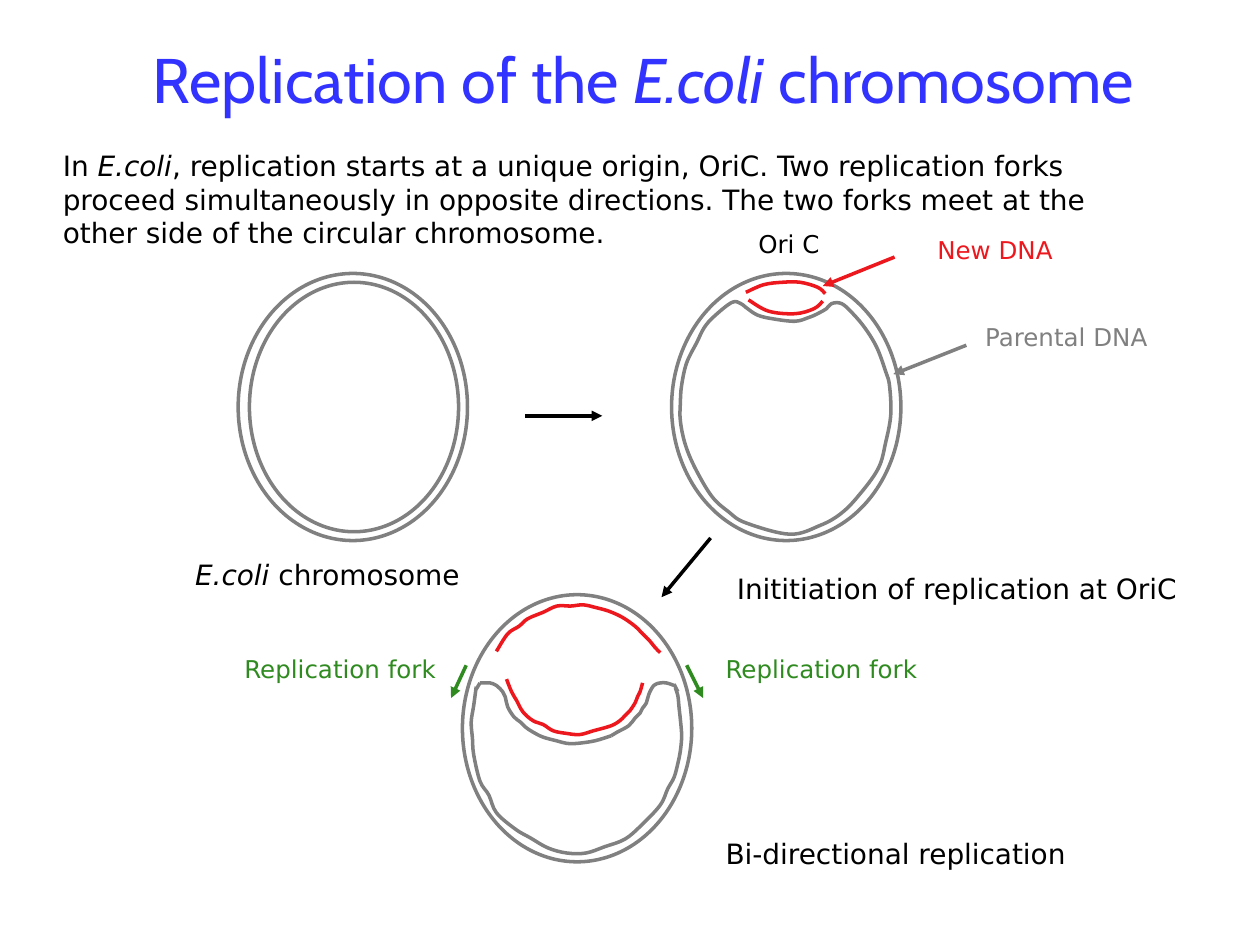
from dataclasses import dataclass

from lxml import etree
from pptx import Presentation
from pptx import util as u
from pptx.dml.color import RGBColor
from pptx.enum import shapes, text
from pptx.oxml.ns import qn

PX = 9144
CELL = (182, 212)


@dataclass(frozen=True)
class Theme:
    """Colours, fonts and sizes of the slide."""
    blue: str = "3333FF"
    ink: str = "000000"
    old: str = "808080"
    new: str = "ED181E"
    fork: str = "2F8B20"
    head: str = "Cabin"
    body: str = "DejaVu Sans"
    title: int = 36
    main: int = 16
    note: int = 14
    line: int = 2


T = Theme()
LOOP = [
    (48, 23), (34, 34), (26, 43), (20, 55), (12, 71), (8, 89), (7, 103),
    (7, 117), (11, 136), (19, 155), (32, 177), (45, 189), (59, 198),
    (94, 207), (118, 200), (134, 191), (148, 177), (164, 155), (170, 134),
    (174, 112), (173, 89), (170, 78), (163, 59), (154, 44), (144, 32),
    (135, 24), (127, 24), (123, 28), (116, 32), (109, 35), (98, 38),
    (80, 36), (68, 33), (59, 27), (55, 24)]
BUBBLE = [
    [(61, 21), (77, 30), (98, 32), (113, 28), (120, 22)],
    [(59, 15), (73, 9), (88, 7), (102, 7), (116, 11), (122, 16)]]
SPLIT = [
    [(11, 73), (9, 88), (7, 101), (8, 114), (9, 127), (14, 148), (21, 159),
     (27, 173), (42, 186), (54, 193), (68, 201), (83, 205), (98, 205),
     (113, 200), (129, 194), (142, 183), (157, 167), (163, 154), (168, 145),
     (171, 134), (173, 124), (174, 112), (173, 99), (172, 90), (171, 80),
     (169, 74)],
    [(168, 72), (162, 70), (157, 70), (152, 72), (148, 79), (146, 86),
     (143, 90), (141, 94), (137, 98), (132, 104), (123, 109), (118, 112)],
    [(118, 112), (105, 116), (91, 118), (83, 118), (75, 116), (64, 113),
     (56, 109), (50, 105), (46, 101), (41, 97), (36, 89), (34, 81),
     (32, 77), (27, 72), (22, 70), (18, 70), (14, 70)],
    [(14, 70), (11, 75)],
    [(168, 71), (171, 77)]]
STRANDS = [
    [(35, 67), (39, 77), (43, 84), (48, 93), (56, 100), (64, 103),
     (72, 108), (82, 110), (93, 111), (104, 108), (118, 104), (125, 100),
     (129, 96), (133, 92), (137, 86), (139, 81), (141, 77), (143, 70)],
    [(27, 45), (36, 31), (45, 25), (52, 19), (64, 14), (75, 9), (86, 9),
     (96, 8), (105, 10), (116, 13), (127, 18), (137, 25), (143, 31),
     (149, 37), (153, 42), (157, 46)]]


def write(page, words, x, y, w, h, size=T.main, color=T.ink, font=T.body,
          wrap=False, align=text.PP_ALIGN.LEFT, anchor=text.MSO_ANCHOR.TOP):
    """Add a text box in which words between asterisks are italic."""
    frame = page.shapes.add_textbox(*(n * PX for n in (x, y, w, h))).text_frame
    frame.word_wrap = wrap
    frame.vertical_anchor = anchor
    para = frame.paragraphs[0]
    para.alignment = align
    for i, part in enumerate(words.split("*")):
        if part:
            run = para.add_run()
            run.text = part
            run.font.size = u.Pt(size)
            run.font.name = font
            run.font.italic = i % 2 == 1
            run.font.color.rgb = RGBColor.from_string(color)


def ink(line, color):
    """Give a line its colour and width."""
    line.color.rgb = RGBColor.from_string(color)
    line.width = u.Pt(T.line)


def outline(shape, color):
    """Leave a shape with its outline only."""
    shape.shadow.inherit = False
    shape.fill.background()
    ink(shape.line, color)


def oval(page, x, y, w, h):
    """Add one ring of parental DNA."""
    kind = shapes.MSO_SHAPE.OVAL
    outline(page.shapes.add_shape(kind, *(n * PX for n in (x, y, w, h))), T.old)


def strand(page, x, y, knots, color, close=False):
    """Draw one smooth curve through knots set from the corner x, y."""
    dots = [((x + a) * PX, (y + b) * PX) for a, b in knots]
    if close:
        ring = [dots[-1], *dots, *dots[:2]]
    else:
        ring = [dots[0], *dots, dots[-1]]
    form = page.shapes.build_freeform(*dots[0])
    form.add_line_segments(ring[2:-1], close=close)
    shape = form.convert_to_shape()
    left, top = shape.left, shape.top
    legs = list(shape._element.iter(qn("a:lnTo")))
    for leg, a, b, c, d in zip(legs, ring, ring[1:], ring[2:], ring[3:]):
        near = [q + (r - p) / 6 for p, q, r in zip(a, b, c)]
        far = [q - (r - p) / 6 for p, q, r in zip(b, c, d)]
        curve = etree.Element(qn("a:cubicBezTo"))
        for px, py in (near, far, c):
            etree.SubElement(curve, qn("a:pt"), x=str(round(px - left)),
                             y=str(round(py - top)))
        leg.getparent().replace(leg, curve)
    outline(shape, color)


def arrow(page, x1, y1, x2, y2, color=T.ink):
    """Draw an arrow that points at its second end."""
    link = page.shapes.add_connector(
        shapes.MSO_CONNECTOR.STRAIGHT, *(n * PX for n in (x1, y1, x2, y2)))
    ink(link.line, color)
    prop = link._element.spPr
    etree.SubElement(prop.get_or_add_ln(), qn("a:tailEnd"), type="triangle")
    etree.SubElement(prop, qn("a:effectLst"))


def intro(page, x, y, w, h):
    """Place the title and the opening text."""
    write(page, "Replication of the *E.coli* chromosome", x + 21, y, w - 21, 125,
          size=T.title, color=T.blue, font=T.head, wrap=True,
          align=text.PP_ALIGN.CENTER, anchor=text.MSO_ANCHOR.MIDDLE)
    write(page, "In *E.coli*, replication starts at a unique origin, OriC. "
          "Two replication forks proceed simultaneously in opposite directions. "
          "The two forks meet at the other side of the circular chromosome.",
          x + 40, y + 113, 869, h - 113, wrap=True)


def whole(page, x, y, w, h):
    """Place the chromosome before replication."""
    oval(page, x + 9, y + 7, w - 16, h - 14)
    oval(page, x, y, w, h)
    write(page, "*E.coli* chromosome", x - 44, y + h + 9, 231, 37)


def start(page, x, y, w, h):
    """Place the chromosome that opens at its origin."""
    oval(page, x, y, w, h)
    strand(page, x, y, LOOP, T.old, close=True)
    for knots in BUBBLE:
        strand(page, x, y, knots, T.new)
    write(page, "Ori C", x + 59, y - 40, 69, 33, size=T.note)
    write(page, "Inititiation of replication at OriC", x + 42, y + h + 20, 374, 37)
    arrow(page, x + w + 52, y + 57, x + w - 6, y + 80, T.old)
    write(page, "Parental DNA", x + w + 57, y + 34, 150, 33,
          size=T.note, color=T.old)
    arrow(page, x + w - 5, y - 13, x + 120, y + 10, T.new)
    write(page, "New DNA", x + w + 19, y - 35, 112, 33,
          size=T.note, color=T.new)


def forks(page, x, y, w, h):
    """Place the chromosome with two moving forks."""
    oval(page, x, y, w, h)
    for group, color in ((SPLIT, T.old), (STRANDS, T.new)):
        for knots in group:
            strand(page, x, y, knots, color)
    write(page, "Bi-directional replication", x + w + 17, y + 187, 291, 37)
    for top, tip, left in ((w - 4, w + 9, w + 17), (3, -9, -183)):
        arrow(page, x + top, y + 56, x + tip, y + 82, T.fork)
        write(page, "Replication fork", x + left, y + 42, 172, 33,
              size=T.note, color=T.fork)


def main():
    """Build and save the slide."""
    deck = Presentation()
    deck.slide_width, deck.slide_height = 1000 * PX, 750 * PX
    page = deck.slides.add_slide(deck.slide_layouts[6])
    intro(page, 0, 0, 1000, 203)
    whole(page, 189, 217, *CELL)
    start(page, 533, 217, *CELL)
    forks(page, 367, 472, *CELL)
    arrow(page, 417, 330, 478, 330)
    arrow(page, 564, 427, 525, 474)
    deck.save("out.pptx")


if __name__ == "__main__":
    main()
